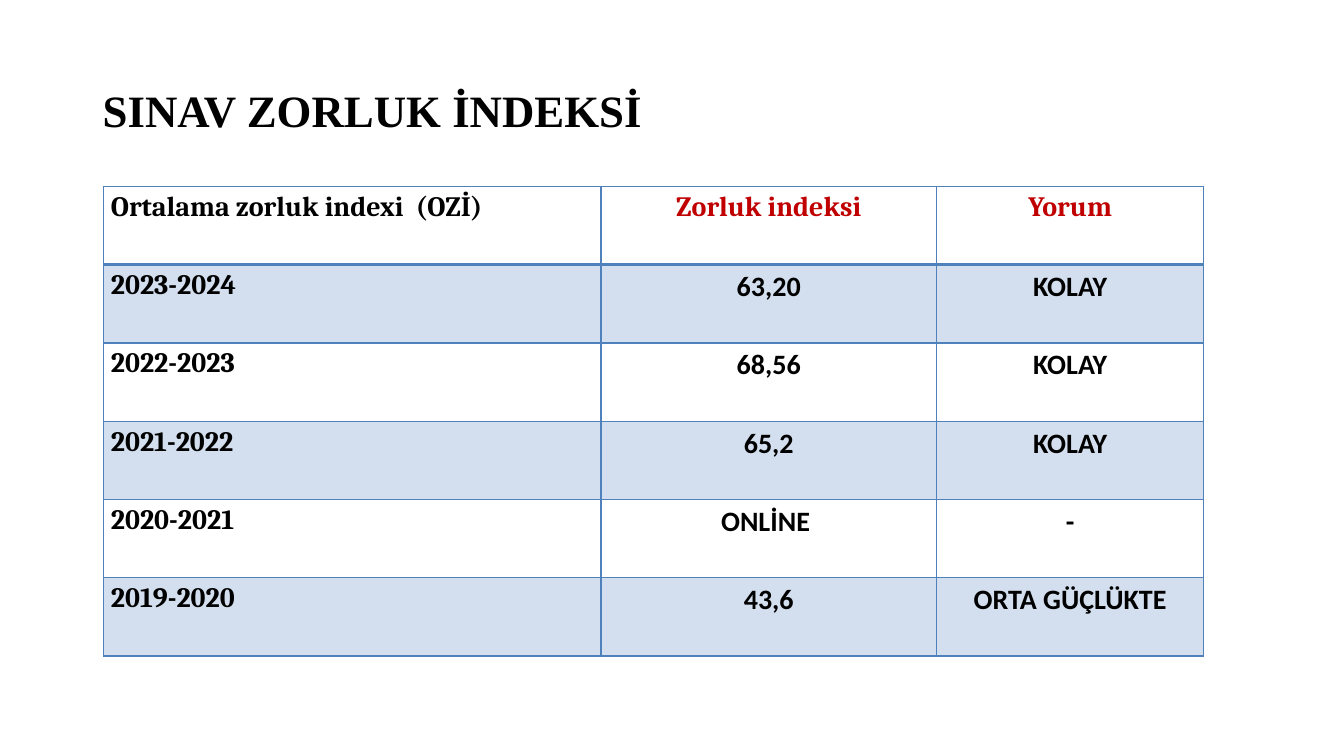
from dataclasses import dataclass

from lxml.etree import SubElement
from pptx import Presentation
from pptx.dml.color import RGBColor
from pptx.enum.text import MSO_ANCHOR, PP_ALIGN
from pptx.oxml.ns import qn
from pptx.util import Inches, Pt


@dataclass(frozen=True)
class Theme:
    ink: str = "000000"
    accent: str = "C00000"
    band: str = "D3DFEE"
    rule: str = "4F81BD"
    thin: float = 1
    thick: float = 2.25
    title: int = 32
    body: int = 20
    title_font: str = "Times New Roman"
    label_font: str = "Cambria"
    value_font: str = "Calibri"


THEME = Theme()
TITLE = "SINAV ZORLUK İNDEKSİ"
WIDTHS = (4.93, 3.33, 2.65)
ROWS = (
    ("Ortalama zorluk indexi  (OZİ)", "Zorluk indeksi", "Yorum"),
    ("2023-2024", "63,20", "KOLAY"),
    ("2022-2023", "68,56", "KOLAY"),
    ("2021-2022", "65,2", "KOLAY"),
    ("2020-2021", "ONLİNE ", "-"),
    ("2019-2020", "43,6", "ORTA GÜÇLÜKTE"),
)


def write(frame, text, *, font, size, color=THEME.ink, align=PP_ALIGN.LEFT, spacing=1.0):
    line = frame.paragraphs[0]
    line.alignment = align
    line.line_spacing = spacing
    run = line.add_run()
    run.text = text
    run.font.name = font
    run.font.size = Pt(size)
    run.font.bold = True
    run.font.color.rgb = RGBColor.from_string(color)


def add_title(slide, left, top, width, height):
    box = slide.shapes.add_textbox(Inches(left), Inches(top), Inches(width), Inches(height))
    frame = box.text_frame
    frame.word_wrap = True
    frame.vertical_anchor = MSO_ANCHOR.MIDDLE
    write(frame, TITLE, font=THEME.title_font, size=THEME.title, spacing=0.9)


def add_rules(cell, **widths):
    """Draw the cell's borders, each side (L, R, T, B) with its width in points."""
    props = cell._tc.get_or_add_tcPr()
    for side, width in widths.items():
        line = SubElement(props, qn(f"a:ln{side}"), w=str(Pt(width)))
        fill = SubElement(line, qn("a:solidFill"))
        SubElement(fill, qn("a:srgbClr"), val=THEME.rule)


def style_cell(cell, row):
    cell.margin_left = cell.margin_right = Inches(0.07)
    cell.margin_top = cell.margin_bottom = 0
    cell.vertical_anchor = MSO_ANCHOR.TOP
    add_rules(
        cell,
        L=THEME.thin,
        R=THEME.thin,
        T=THEME.thick if row == 1 else THEME.thin,
        B=THEME.thick if row == 0 else THEME.thin,
    )
    if row % 2:
        cell.fill.solid()
        cell.fill.fore_color.rgb = RGBColor.from_string(THEME.band)
    else:
        cell.fill.background()


def add_grid(slide, left, top, height):
    frame = slide.shapes.add_table(
        len(ROWS), len(WIDTHS), Inches(left), Inches(top), Inches(sum(WIDTHS)), Inches(height)
    )
    table = frame.table
    table.first_row = table.horz_banding = False
    for column, width in zip(table.columns, WIDTHS):
        column.width = Inches(width)
    for r, texts in enumerate(ROWS):
        for c, text in enumerate(texts):
            cell = table.cell(r, c)
            style_cell(cell, r)
            write(
                cell.text_frame,
                text,
                font=THEME.value_font if r and c else THEME.label_font,
                size=THEME.body,
                color=THEME.accent if c and not r else THEME.ink,
                align=PP_ALIGN.CENTER if c else PP_ALIGN.LEFT,
                spacing=1.15,
            )


def main():
    deck = Presentation()
    deck.slide_width = Inches(13.33)
    deck.slide_height = Inches(7.5)
    slide = deck.slides.add_slide(deck.slide_layouts[6])
    add_title(slide, 0.92, 0.4, 11.5, 1.45)
    add_grid(slide, 1.03, 1.85, 4.66)
    deck.save("out.pptx")


if __name__ == "__main__":
    main()
